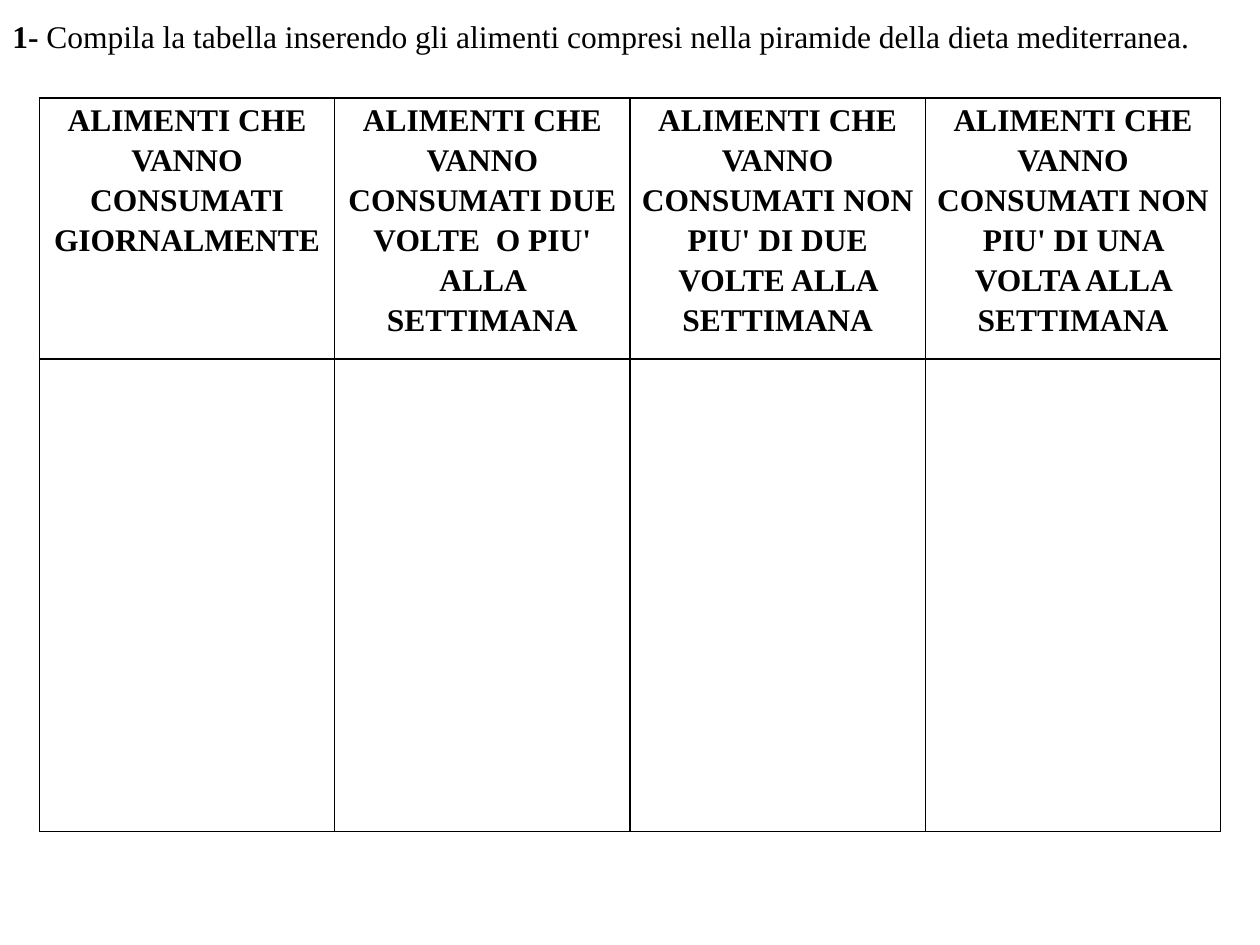
import pptx
import pptx.dml.color
import pptx.enum.text
import pptx.oxml
import pptx.oxml.ns
import pptx.util

Pt = pptx.util.Pt
BLACK = "000000"
WHITE = "FFFFFF"
HEADINGS = [
    "ALIMENTI CHE VANNO CONSUMATI GIORNALMENTE",
    "ALIMENTI CHE VANNO CONSUMATI DUE VOLTE  O PIU' ALLA SETTIMANA",
    "ALIMENTI CHE VANNO CONSUMATI NON PIU' DI DUE VOLTE ALLA SETTIMANA",
    "ALIMENTI CHE VANNO CONSUMATI NON PIU' DI UNA VOLTA ALLA SETTIMANA",
]


def color(value):
    return pptx.dml.color.RGBColor.from_string(value)


def add_text(para, text, size=18, bold=False, fill=BLACK, font="Times New Roman"):
    span = para.add_run()
    span.text = text
    span.font.size = Pt(size)
    span.font.bold = bold
    span.font.name = font
    span.font.color.rgb = color(fill)


def add_instruction(page, left, top, width, height):
    box = page.shapes.add_textbox(Pt(left), Pt(top), Pt(width), Pt(height))
    frame = box.text_frame
    frame.word_wrap = False
    frame.auto_size = pptx.enum.text.MSO_AUTO_SIZE.SHAPE_TO_FIT_TEXT
    frame.vertical_anchor = pptx.enum.text.MSO_ANCHOR.MIDDLE
    para = frame.paragraphs[0]
    add_text(para, "1- ", bold=True)
    add_text(para, "Compila la tabella inserendo gli alimenti compresi "
                   "nella piramide della dieta mediterranea.")


def style_cell(cell):
    """Give a cell thin black borders, a white fill and narrow margins."""
    cell.margin_left = cell.margin_right = Pt(5)
    cell.margin_top = cell.margin_bottom = Pt(0)
    properties = cell._tc.get_or_add_tcPr()
    for side in ("lnL", "lnR", "lnT", "lnB"):
        properties.append(pptx.oxml.parse_xml(
            f'<a:{side} {pptx.oxml.ns.nsdecls("a")} w="{Pt(1)}"><a:solidFill>'
            f'<a:srgbClr val="{BLACK}"/></a:solidFill></a:{side}>'))
    cell.fill.solid()
    cell.fill.fore_color.rgb = color(WHITE)


def add_food_table(page, left, top, width, row_heights):
    frame = page.shapes.add_table(len(row_heights), len(HEADINGS), Pt(left), Pt(top),
                                  Pt(width), Pt(sum(row_heights)))
    table = frame.table
    table.first_row = table.horz_banding = False
    for row, height in zip(table.rows, row_heights):
        row.height = Pt(height)
    for column in table.columns:
        column.width = Pt(width / len(HEADINGS))
    for cell in table.iter_cells():
        style_cell(cell)
    for cell, heading in zip(table.rows[0].cells, HEADINGS):
        para = cell.text_frame.paragraphs[0]
        para.alignment = pptx.enum.text.PP_ALIGN.CENTER
        para.line_spacing = 1.15
        add_text(para, heading, bold=True)


def main():
    deck = pptx.Presentation()
    deck.slide_width, deck.slide_height = Pt(720), Pt(540)
    page = deck.slides.add_slide(deck.slide_layouts[6])
    add_instruction(page, 0, 6, 695, 29)
    add_food_table(page, 22.5, 56, 675, [149, 270])
    deck.save("out.pptx")


if __name__ == "__main__":
    main()
